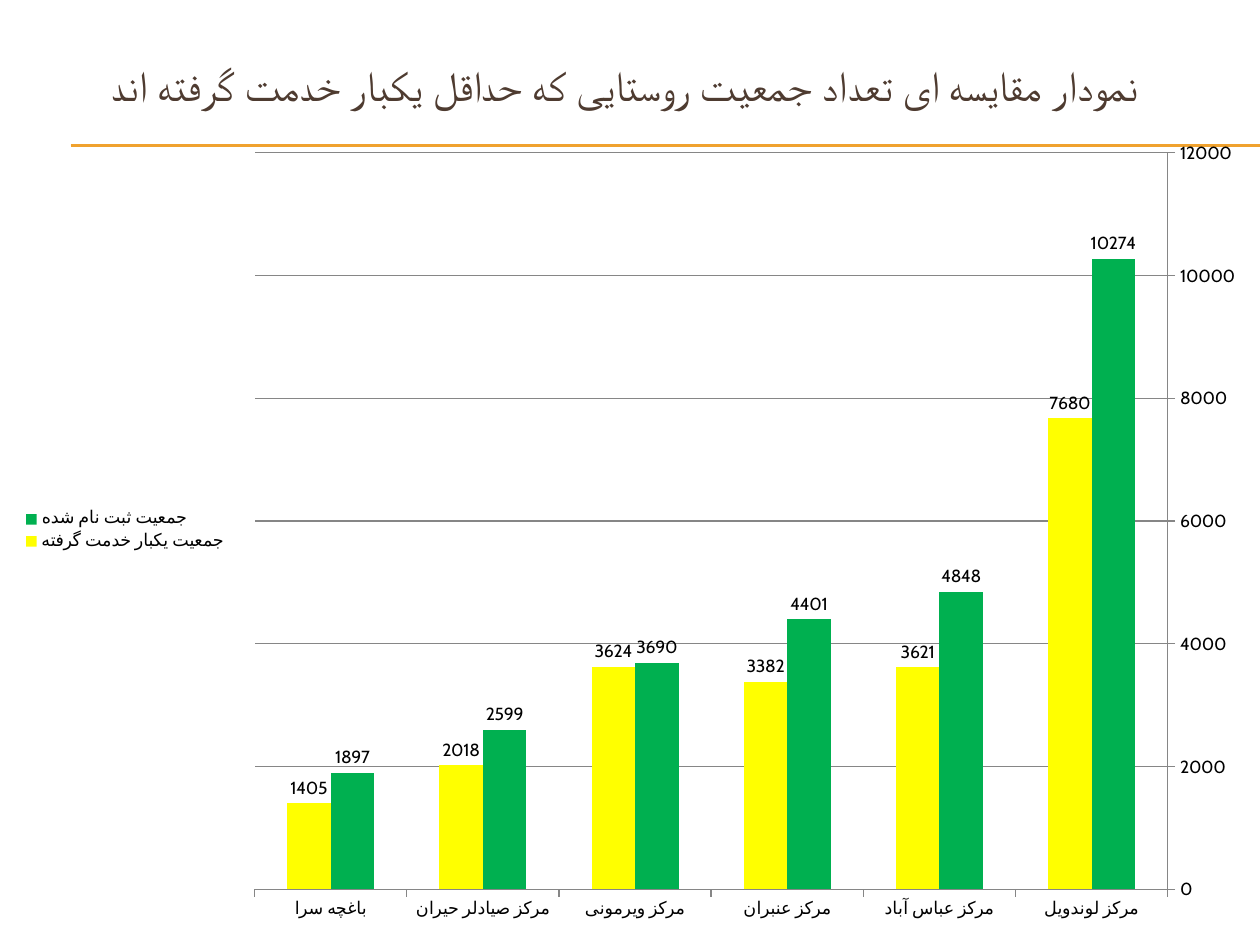
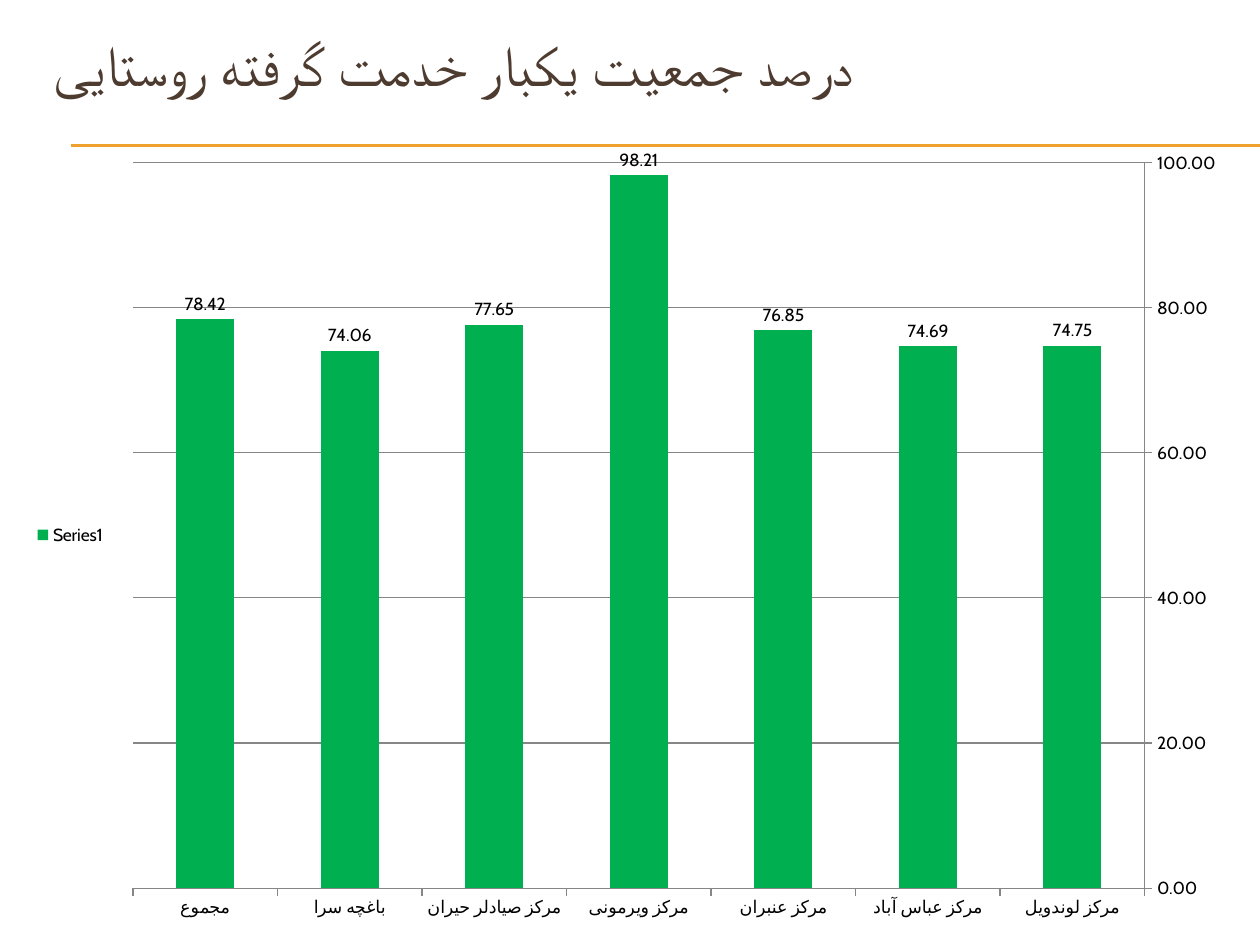
from dataclasses import dataclass

from lxml.etree import SubElement
from pptx import Presentation
from pptx.chart.chart import Chart
from pptx.chart.data import CategoryChartData as ChartData
from pptx.dml.color import RGBColor as Rgb
from pptx.enum.chart import XL_CHART_TYPE as Kind
from pptx.enum.chart import XL_LABEL_POSITION as Spot
from pptx.enum.chart import XL_LEGEND_POSITION as Side
from pptx.enum.chart import XL_TICK_MARK as Tick
from pptx.enum.shapes import MSO_CONNECTOR as Link
from pptx.enum.text import MSO_ANCHOR as Anchor
from pptx.enum.text import PP_ALIGN as Align
from pptx.oxml.ns import qn
from pptx.slide import Slide
from pptx.util import Pt

SCALE = 9144
FONT = "Cabin"
HUES = {
    "title": "4E3B30",
    "rule": "F0A22E",
    "green": "00B050",
    "yellow": "FFFF00",
    "text": "000000",
    "grid": "868686",
}
TOWNS = [
    "مرکز لوندویل",
    "مرکز عباس آباد",
    "مرکز عنبران",
    "مرکز ویرمونی",
    "مرکز صیادلر حیران",
    "باغچه سرا",
]


@dataclass(frozen=True)
class Box:
    left: int
    top: int
    width: int
    height: int

    def emu(self) -> tuple[int, int, int, int]:
        return px(self.left), px(self.top), px(self.width), px(self.height)


@dataclass(frozen=True)
class Title:
    text: str
    box: Box
    size: float
    align: Align


@dataclass(frozen=True)
class Bars:
    name: str
    vals: list[float]
    hue: str


@dataclass(frozen=True)
class Graph:
    box: Box
    cats: list[str]
    bars: list[Bars]
    top: int
    step: int
    form: str


@dataclass(frozen=True)
class Page:
    title: Title
    graph: Graph


PAGES = [
    Page(
        Title("نمودار مقایسه ای تعداد جمعیت روستایی که حداقل یکبار خدمت گرفته اند ",
              Box(0, 17, 1000, 100), 24, Align.CENTER),
        Graph(Box(8, 100, 992, 642), TOWNS, [
            Bars("جمعیت ثبت نام شده", [10274, 4848, 4401, 3690, 2599, 1897], "green"),
            Bars("جمعیت یکبار خدمت گرفته", [7680, 3621, 3382, 3624, 2018, 1405], "yellow"),
        ], 12000, 2000, "General"),
    ),
    Page(
        Title("درصد جمعیت یکبار خدمت گرفته روستایی",
              Box(33, 17, 950, 67), 32.4, Align.LEFT),
        Graph(Box(17, 108, 967, 633), TOWNS + ["مجموع"], [
            Bars("Series1", [74.75, 74.69, 76.85, 98.21, 77.65, 74.06, 78.42], "green"),
        ], 100, 20, "0.00"),
    ),
]


def px(count: int) -> int:
    return count * SCALE


def tint(name: str) -> Rgb:
    return Rgb.from_string(HUES[name])


def add_rules(slide: Slide) -> None:
    for top in (115, 116):
        rule = slide.shapes.add_connector(Link.STRAIGHT, px(56), px(top), px(1000), px(top))
        rule.line.color.rgb = tint("rule")
        rule.line.width = Pt(0.75)
        SubElement(rule.element.spPr, qn("a:effectLst"))


def add_title(slide: Slide, title: Title) -> None:
    frame = slide.shapes.add_textbox(*title.box.emu()).text_frame
    frame.word_wrap = True
    frame.vertical_anchor = Anchor.MIDDLE
    frame.text = title.text
    para = frame.paragraphs[0]
    para.alignment = title.align
    font = para.runs[0].font
    font.name = FONT
    font.size = Pt(title.size)
    font.color.rgb = tint("title")


def style_axes(chart: Chart, graph: Graph) -> None:
    cat, val = chart.category_axis, chart.value_axis
    cat.reverse_order = True
    val.minimum_scale = 0
    val.maximum_scale = graph.top
    val.major_unit = graph.step
    val.has_major_gridlines = True
    val.tick_labels.number_format = graph.form
    val.tick_labels.number_format_is_linked = False
    for axis in (cat, val):
        axis.major_tick_mark = Tick.OUTSIDE
        axis.minor_tick_mark = Tick.NONE
    for part in (cat, val, val.major_gridlines):
        part.format.line.color.rgb = tint("grid")
        part.format.line.width = Pt(0.75)


def style_bars(chart: Chart, graph: Graph) -> None:
    plot = chart.plots[0]
    plot.gap_width = 150
    plot.vary_by_categories = False
    for bars, row in zip(graph.bars, plot.series):
        row.invert_if_negative = False
        row.format.fill.solid()
        row.format.fill.fore_color.rgb = tint(bars.hue)
        tags = row.data_labels
        tags.show_value = True
        tags.position = Spot.OUTSIDE_END
        tags.number_format = graph.form
        tags.number_format_is_linked = False


def add_graph(slide: Slide, graph: Graph) -> None:
    data = ChartData(number_format=graph.form)
    data.categories = graph.cats
    for bars in graph.bars:
        data.add_series(bars.name, bars.vals)
    chart = slide.shapes.add_chart(Kind.COLUMN_CLUSTERED, *graph.box.emu(), data).chart
    chart.has_title = False
    chart.font.name = FONT
    chart.font.size = Pt(10)
    chart.font.color.rgb = tint("text")
    chart.has_legend = True
    chart.legend.position = Side.LEFT
    chart.legend.include_in_layout = False
    style_axes(chart, graph)
    style_bars(chart, graph)


def main() -> None:
    deck = Presentation()
    deck.slide_width, deck.slide_height = px(1000), px(750)
    for page in PAGES:
        slide = deck.slides.add_slide(deck.slide_layouts[6])
        add_rules(slide)
        add_title(slide, page.title)
        add_graph(slide, page.graph)
    deck.save("out.pptx")


if __name__ == "__main__":
    main()
